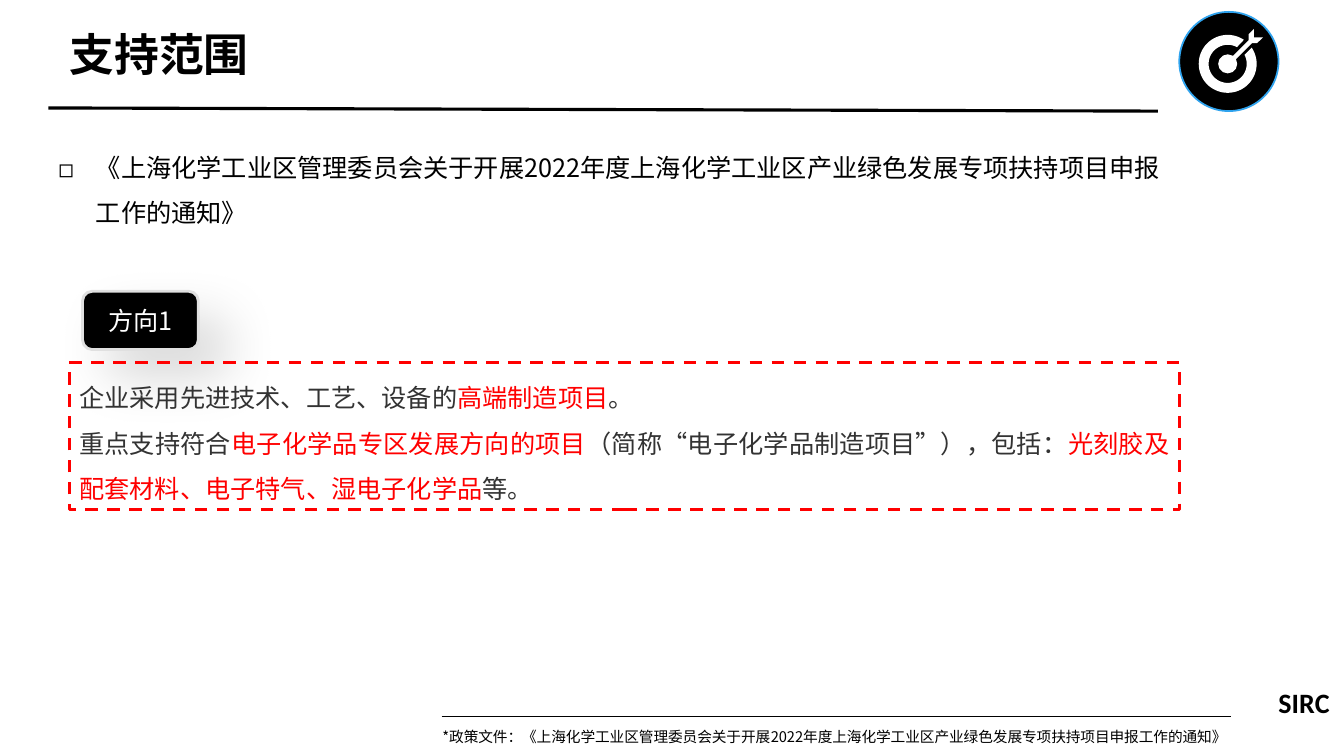
from math import cos, radians, sin

from lxml.etree import SubElement
from pptx import Presentation
from pptx.dml.color import RGBColor
from pptx.enum.dml import MSO_LINE
from pptx.enum.shapes import MSO_CONNECTOR, MSO_SHAPE
from pptx.enum.text import MSO_ANCHOR, MSO_AUTO_SIZE, PP_ALIGN
from pptx.oxml.ns import qn
from pptx.util import Cm, Pt

BLACK = RGBColor(0x00, 0x00, 0x00)
WHITE = RGBColor(0xFF, 0xFF, 0xFF)
RED = RGBColor(0xFF, 0x00, 0x00)
GRAY = RGBColor(0x33, 0x33, 0x33)
SILVER = RGBColor(0xE0, 0xE0, 0xE0)
BLUE = RGBColor(0x2F, 0xA3, 0xEE)
CJK_FONT = "Noto Sans CJK SC"
POLICY = "《上海化学工业区管理委员会关于开展2022年度上海化学工业区产业绿色发展专项扶持项目申报工作的通知》"
DIRECTION = [
    [("企业采用先进技术、工艺、设备的", GRAY), ("高端制造项目", RED), ("。", GRAY)],
    [("重点支持符合", GRAY), ("电子化学品专区发展方向的项目", RED),
     ("（简称“电子化学品制造项目”），包括：", GRAY),
     ("光刻胶及配套材料、电子特气、湿电子化学品", RED), ("等。", GRAY)],
]
DART = [(0.12, -0.19), (0.53, -0.6), (0.53, -0.75), (0.66, -0.88), (0.66, -0.67),
        (0.89, -0.67), (0.74, -0.52), (0.61, -0.52), (0.2, -0.11)]


def apply(target, values):
    """Set every attribute named in a dict of format values."""
    for name, value in values.items():
        setattr(target, name, value)


def write(shape, paragraphs, size, font=CJK_FONT, bold=False, grow=True, **layout):
    """Fill a shape with paragraphs given as lists of (text, colour)."""
    frame = shape.text_frame
    apply(frame, {"word_wrap": True, "vertical_anchor": MSO_ANCHOR.TOP,
                  "auto_size": MSO_AUTO_SIZE.SHAPE_TO_FIT_TEXT if grow else MSO_AUTO_SIZE.NONE})
    for index, spans in enumerate(paragraphs):
        para = frame.add_paragraph() if index else frame.paragraphs[0]
        apply(para, layout)
        for text, color in spans:
            span = para.add_run()
            span.text = text
            apply(span.font, {"size": Pt(size), "name": font, "bold": bold})
            span.font.color.rgb = color
            properties = span.font._element
            properties.set("lang", "zh-CN")
            SubElement(properties, qn("a:ea"), typeface=font)
    return frame


def add_text(page, box, text, size, **options):
    """Place a one-paragraph black text box."""
    shape = page.shapes.add_textbox(*map(Cm, box))
    return write(shape, [[(text, BLACK)]], size, **options)


def style(shape, fill=None, line=None, width=0):
    """Give a shape a plain fill and outline without a shadow."""
    shape.shadow.inherit = False
    if fill is None:
        shape.fill.background()
    else:
        shape.fill.solid()
        shape.fill.fore_color.rgb = fill
    if line is None:
        shape.line.fill.background()
    else:
        shape.line.color.rgb = line
        shape.line.width = Pt(width)
    return shape


def add_rule(page, start, end, width):
    """Draw a black straight line."""
    rule = page.shapes.add_connector(MSO_CONNECTOR.STRAIGHT, *map(Cm, start + end))
    rule.line.color.rgb = BLACK
    rule.line.width = Pt(width)
    SubElement(rule._element.spPr, qn("a:effectLst"))


def add_disc(page, center, radius, *look):
    """Draw a circle around a centre."""
    x, y = center
    box = x - radius, y - radius, 2 * radius, 2 * radius
    style(page.shapes.add_shape(MSO_SHAPE.OVAL, *map(Cm, box)), *look)


def add_outline(page, center, points):
    """Draw a white polygon from offsets around a centre."""
    (x, y), *others = [(Cm(center[0] + dx), Cm(center[1] + dy)) for dx, dy in points]
    builder = page.shapes.build_freeform(x, y)
    builder.add_line_segments(others)
    style(builder.convert_to_shape(), WHITE)


def arc(radius, first, last, steps=60):
    """Return points along an arc given in degrees."""
    angles = [radians(first + (last - first) * i / steps) for i in range(steps + 1)]
    return [(radius * cos(angle), radius * sin(angle)) for angle in angles]


def add_target(page, box):
    """Draw the round target icon with its dart."""
    left, top, side = box
    add_disc(page, (left + side / 2, top + side / 2), side / 2, BLACK, BLUE, 1.25)
    center = left + 1.22, top + 1.31
    add_outline(page, center, arc(0.73, -34, 304) + arc(0.48, 299, -28))
    add_disc(page, center, 0.24, WHITE)
    add_outline(page, center, DART)


def add_header(page, box):
    """Place the title, its rule and the icon."""
    left, top, width = box
    add_text(page, (left, top, 5.3, 1.62), "支持范围", 32, bold=True, alignment=PP_ALIGN.RIGHT)
    add_rule(page, (left, top + 2.16), (left + width, top + 2.24), 2.25)
    add_target(page, (left + width + 0.54, top - 0.26, 2.5))


def add_policy(page, box):
    """Place the bulleted policy title."""
    frame = add_text(page, box, POLICY, 18, line_spacing=1.5)
    properties = frame.paragraphs[0]._p.get_or_add_pPr()
    properties.set("marL", str(Cm(0.95)))
    properties.set("indent", str(Cm(-0.95)))
    SubElement(properties, qn("a:buFont"), typeface=CJK_FONT)
    SubElement(properties, qn("a:buChar"), char="◻")


def add_direction(page, box):
    """Place the direction tag above its dashed text frame."""
    left, top, width, height = box
    tag_box = left + 0.33, top, 2.92, 1.47
    tag = page.shapes.add_shape(MSO_SHAPE.ROUNDED_RECTANGLE, *map(Cm, tag_box))
    style(tag, BLACK, SILVER, 2)
    frame = write(tag, [[("方向1", WHITE)]], 18, grow=False, alignment=PP_ALIGN.CENTER)
    frame.vertical_anchor = MSO_ANCHOR.MIDDLE
    effects = tag._element.spPr.find(qn("a:effectLst"))
    shadow = SubElement(effects, qn("a:outerShdw"), blurRad=str(Pt(38)), dist=str(Pt(27)),
                        dir="2700000", algn="tl", rotWithShape="0")
    color = SubElement(shadow, qn("a:srgbClr"), val=str(BLACK))
    SubElement(color, qn("a:alpha"), val="15000")

    panel_box = left, top + 1.8, width, height - 1.8
    panel = style(page.shapes.add_shape(MSO_SHAPE.RECTANGLE, *map(Cm, panel_box)),
                  None, RED, 2.25)
    panel.line.dash_style = MSO_LINE.DASH
    write(panel, DIRECTION, 18, alignment=PP_ALIGN.JUSTIFY, line_spacing=1.5)


def add_footer(page, box):
    """Place the source note, its rule and the organisation mark."""
    left, top, width = box
    add_text(page, (left, top + 0.15, width, 1.47), "*政策文件：" + POLICY, 10.5)
    add_rule(page, (left + 0.23, top), (left + width - 0.58, top), 0.75)
    add_text(page, (left + width + 0.37, top - 0.92, 2.59, 1.12), "SIRC", 20,
             font="Calibri", bold=True)


def main():
    """Build and save the slide."""
    deck = Presentation()
    apply(deck, {"slide_width": Cm(33.87), "slide_height": Cm(19.05)})
    page = deck.slides.add_slide(deck.slide_layouts[6])
    add_header(page, (1.22, 0.56, 27.96))
    add_direction(page, (1.75, 7.34, 27.97, 5.51))
    add_footer(page, (10.9, 18.06, 20.7))
    add_policy(page, (1.22, 3.33, 28.5, 2.57))
    deck.save("out.pptx")


if __name__ == "__main__":
    main()
